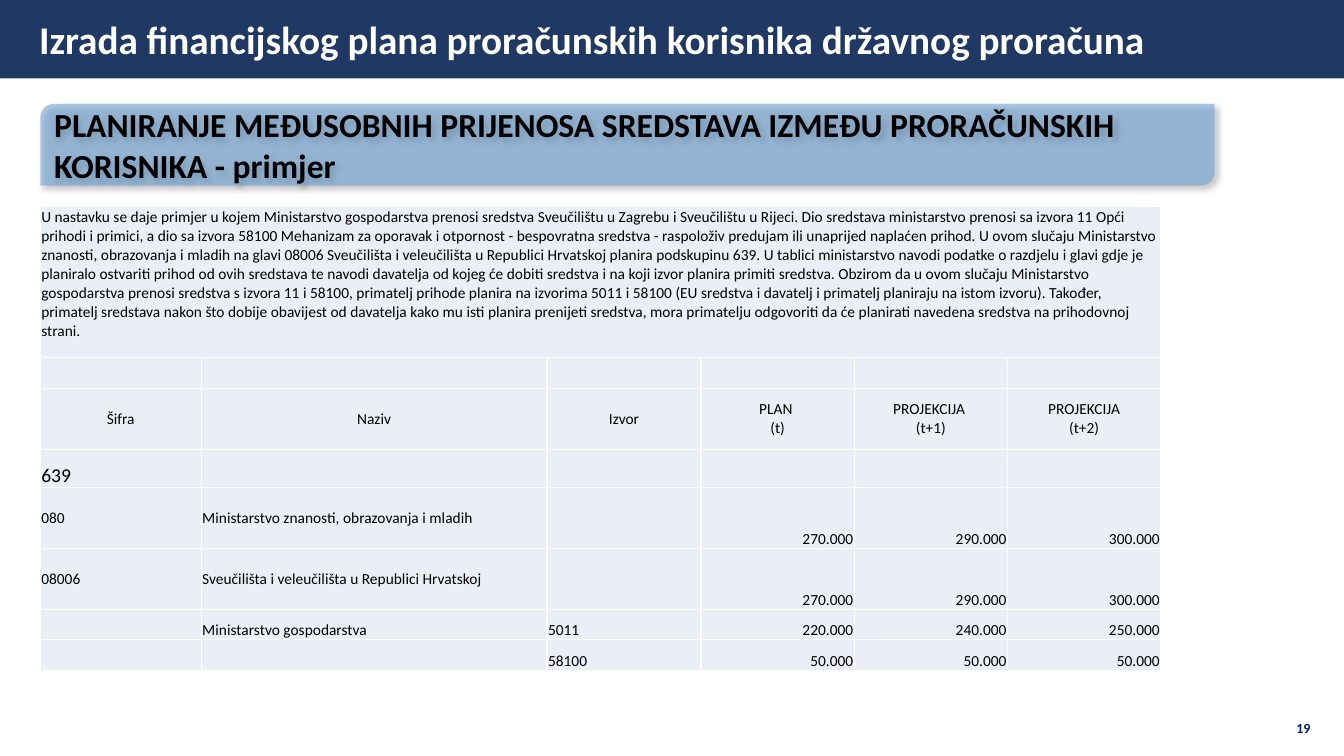
import pptx
import pptx.dml.color
import pptx.enum.shapes
import pptx.enum.text
import pptx.oxml
import pptx.oxml.ns
import pptx.util

Pt = pptx.util.Pt
ALIGN = pptx.enum.text.PP_ALIGN
ANCHOR = pptx.enum.text.MSO_ANCHOR
SHAPE = pptx.enum.shapes.MSO_SHAPE

INTRO_SENTENCES = [
    "U nastavku se daje primjer u kojem Ministarstvo gospodarstva prenosi sredstva Sveučilištu u Zagrebu "
    "i Sveučilištu u Rijeci.",
    "Dio sredstava ministarstvo prenosi sa izvora 11 Opći prihodi i primici, a dio "
    "sa izvora 58100 Mehanizam za oporavak i otpornost - bespovratna sredstva - raspoloživ predujam ili "
    "unaprijed naplaćen prihod.",
    "U ovom slučaju Ministarstvo znanosti, obrazovanja i mladih na glavi 08006 "
    "Sveučilišta i veleučilišta u Republici Hrvatskoj planira podskupinu 639.",
    "U tablici ministarstvo navodi podatke o razdjelu i glavi gdje je planiralo ostvariti prihod od ovih "
    "sredstava te navodi davatelja od kojeg će dobiti sredstva i na koji izvor planira primiti sredstva.",
    "Obzirom da u ovom slučaju Ministarstvo gospodarstva prenosi sredstva s izvora 11 i 58100, primatelj "
    "prihode planira na izvorima 5011 i 58100 (EU sredstva i davatelj i primatelj planiraju na istom izvoru).",
    "Također, primatelj sredstava nakon što dobije obavijest od davatelja kako mu isti planira prenijeti "
    "sredstva, mora primatelju odgovoriti da će planirati navedena sredstva na prihodovnoj strani.",
]
COLUMN_WIDTHS = [115, 247, 110, 109.5, 109.5, 109.5]
ROWS = [
    (108, ANCHOR.TOP, [" ".join(INTRO_SENTENCES)]),
    (21.75, ANCHOR.BOTTOM, []),
    (43.5, ANCHOR.MIDDLE, ["Šifra", "Naziv", "Izvor", "PLAN \n(t)", "PROJEKCIJA \n(t+1)", "PROJEKCIJA\n(t+2)"]),
    (27.5, ANCHOR.BOTTOM, ["639"]),
    (43.5, ANCHOR.MIDDLE, ["080", "Ministarstvo znanosti, obrazovanja i mladih", "",
                           "270.000", "290.000", "300.000"]),
    (43.5, ANCHOR.MIDDLE, ["08006", "Sveučilišta i veleučilišta u Republici Hrvatskoj", "",
                           "270.000", "290.000", "300.000"]),
    (21.75, ANCHOR.BOTTOM, ["", "Ministarstvo gospodarstva", "5011", "220.000", "240.000", "250.000"]),
    (21.75, ANCHOR.BOTTOM, ["", "", "58100", "50.000", "50.000", "50.000"]),
]
HEADER_ROW, GROUP_ROW, FIRST_AMOUNT = 2, 3, 3


def color(value):
    """Turn a hex string into a colour."""
    return pptx.dml.color.RGBColor.from_string(value)


def child(parent, tag, **attributes):
    """Append a drawing element with the given attributes."""
    element = pptx.oxml.parse_xml(f"<{tag} {pptx.oxml.ns.nsdecls('a')}/>")
    for name, value in attributes.items():
        element.set(name, str(value))
    parent.append(element)
    return element


def write(para, text, size, ink="000000", bold=False):
    """Add text to a paragraph, breaking lines at newlines."""
    for number, line in enumerate(text.split("\n")):
        if number:
            para.add_line_break()
        span = para.add_run()
        span.text = line
        span.font.name = "Calibri"
        span.font.size = Pt(size)
        span.font.bold = bold
        span.font.color.rgb = color(ink)


def add_bar(page, kind, box, fill, text, size, ink):
    """Place a filled bar with bold left-aligned text."""
    bar = page.shapes.add_shape(kind, *map(Pt, box))
    bar.shadow.inherit = False
    bar.fill.solid()
    bar.fill.fore_color.rgb = color(fill)
    bar.line.fill.background()
    bar.text_frame.word_wrap = True
    bar.text_frame.vertical_anchor = ANCHOR.MIDDLE
    para = bar.text_frame.paragraphs[0]
    para.alignment = ALIGN.LEFT
    write(para, text, size, ink, True)
    return bar


def add_title(page, box):
    """Place the title band."""
    band = add_bar(page, SHAPE.RECTANGLE, box, "203864",
                   "Izrada financijskog plana proračunskih korisnika državnog proračuna", 28, "FFFFFF")
    band.text_frame.margin_left = Pt(28)


def add_banner(page, box):
    """Place the translucent section banner with its shadow."""
    banner = add_bar(page, SHAPE.ROUND_2_DIAG_RECTANGLE, box, "5B9BD5",
                     "PLANIRANJE MEĐUSOBNIH PRIJENOSA SREDSTAVA IZMEĐU PRORAČUNSKIH KORISNIKA - primjer",
                     24, "000000")
    properties = banner.element.spPr
    child(properties.find(".//" + pptx.oxml.ns.qn("a:srgbClr")), "a:alpha", val=50000)
    effects = properties.find(pptx.oxml.ns.qn("a:effectLst"))
    shadow = child(effects, "a:outerShdw", blurRad=Pt(4), dist=Pt(3), dir=45 * 60000,
                   algn="tl", rotWithShape=0)
    child(child(shadow, "a:srgbClr", val="000000"), "a:alpha", val=40000)


def fill_cell(cell, text, anchor, align, size):
    """Style one table cell and write its text."""
    cell.fill.solid()
    cell.fill.fore_color.rgb = color("EAEFF7")
    cell.margin_left = cell.margin_right = cell.margin_top = Pt(0.7)
    cell.margin_bottom = 0
    cell.vertical_anchor = anchor
    para = cell.text_frame.paragraphs[0]
    para.alignment = align
    if text:
        write(para, text, size)
    else:
        child(para._p, "a:endParaRPr", sz=size * 100)


def add_plan_table(page, box):
    """Place the table of planned transfers."""
    table = page.shapes.add_table(len(ROWS), len(COLUMN_WIDTHS), *map(Pt, box)).table
    table.first_row = table.horz_banding = False
    for column, width in zip(table.columns, COLUMN_WIDTHS):
        column.width = Pt(width)
    for row_number, (height, anchor, texts) in enumerate(ROWS):
        table.rows[row_number].height = Pt(height)
        size = 14 if row_number == GROUP_ROW else 11
        for column_number in range(len(COLUMN_WIDTHS)):
            text = texts[column_number] if column_number < len(texts) else ""
            cell_anchor, align = anchor, ALIGN.LEFT
            if row_number == HEADER_ROW:
                align = ALIGN.CENTER
            elif column_number >= FIRST_AMOUNT:
                cell_anchor, align = ANCHOR.BOTTOM, ALIGN.RIGHT
            fill_cell(table.cell(row_number, column_number), text, cell_anchor, align, size)
    table.cell(0, 0).merge(table.cell(0, len(COLUMN_WIDTHS) - 1))


def add_page_number(page, box):
    """Place the page number."""
    frame = page.shapes.add_textbox(*map(Pt, box)).text_frame
    frame.margin_left = frame.margin_right = frame.margin_top = frame.margin_bottom = 0
    frame.word_wrap = True
    frame.auto_size = pptx.enum.text.MSO_AUTO_SIZE.SHAPE_TO_FIT_TEXT
    para = frame.paragraphs[0]
    para.line_spacing = 0.9
    write(para, "19", 10, "002060", True)


def main():
    """Build and save the deck."""
    deck = pptx.Presentation()
    deck.slide_width, deck.slide_height = Pt(960), Pt(540)
    page = deck.slides.add_slide(deck.slide_layouts[6])
    add_page_number(page, (926, 515.5, 16, 11))
    add_title(page, (0, 0, 960, 56))
    add_banner(page, (28.8, 74.2, 838.8, 58.3))
    add_plan_table(page, (28.8, 147.6, sum(COLUMN_WIDTHS), sum(row[0] for row in ROWS)))
    deck.save("out.pptx")


if __name__ == "__main__":
    main()
